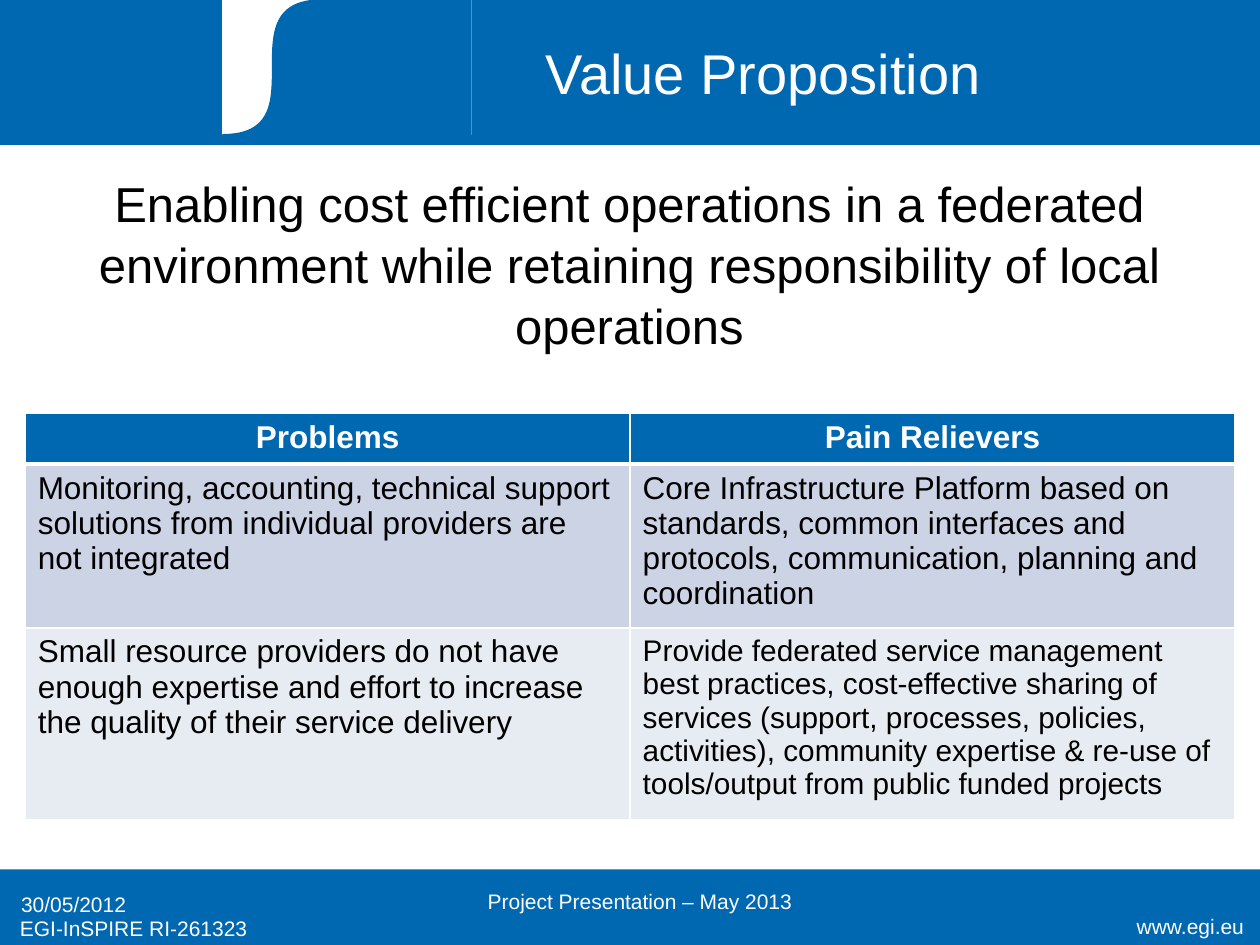
import dataclasses

import pptx
import pptx.dml.color
import pptx.enum.shapes
import pptx.enum.text
import pptx.oxml.ns
import pptx.util
from lxml import etree

Pt = pptx.util.Pt
RGB = pptx.dml.color.RGBColor.from_string
ALIGN = pptx.enum.text.PP_ALIGN
ANCHOR = pptx.enum.text.MSO_ANCHOR
RECTANGLE = pptx.enum.shapes.MSO_SHAPE.RECTANGLE


@dataclasses.dataclass(frozen=True)
class Theme:
    """Colours, font and type sizes of the slide."""

    blue: str = "0067B1"
    white: str = "FFFFFF"
    black: str = "000000"
    bands: tuple = ("CCD3E4", "E7EBF2")
    font: str = "Arial"
    title: float = 32
    statement: float = 28
    table: float = 18
    dense: float = 17
    footer: float = 12
    hairline: float = 0.75


THEME = Theme()


def write(frame, text, size, color, align=ALIGN.LEFT, bold=False, spacing=None):
    """Put one formatted paragraph in a text frame."""
    paragraph = frame.paragraphs[0]
    paragraph.text = text
    paragraph.alignment = align
    if spacing:
        paragraph.line_spacing = spacing
    formats = {"name": THEME.font, "size": Pt(size), "bold": bold}
    for key, value in formats.items():
        setattr(paragraph.font, key, value)
    paragraph.font.color.rgb = RGB(color)


def add_text(slide, box, text, size, color, anchor=ANCHOR.TOP, **paragraph):
    """Add a wrapping text box."""
    frame = slide.shapes.add_textbox(*map(Pt, box)).text_frame
    frame.word_wrap = True
    frame.vertical_anchor = anchor
    write(frame, text, size, color, **paragraph)


def paint(shape, color, outlined=True):
    """Give a shape one flat colour, with a matching outline if wanted."""
    shape.shadow.inherit = False
    shape.fill.solid()
    shape.fill.fore_color.rgb = RGB(color)
    if outlined:
        shape.line.color.rgb = RGB(color)
        shape.line.width = Pt(THEME.hairline)
    else:
        shape.line.fill.background()


def s_curve(left, top, width, height, steps=48):
    """Return points of the S-shaped edge from bottom left to the top."""
    reach = 0.4 * width
    points = []
    for step in range(steps + 1):
        t = step / steps
        across = 3 * t * (1 - t) ** 2 + t**3
        down = (1 - t) ** 3 + 3 * t * (1 - t) ** 2
        points.append((left + reach * across, top + height * down))
    return points


def add_header(slide, box):
    """Draw the title band with its curved white notch."""
    left, top, width, height = box
    notch = (left + 127.4, top, 141.8, 77)
    for area, color in ((box, THEME.blue), (notch, THEME.white)):
        paint(slide.shapes.add_shape(RECTANGLE, *map(Pt, area)), color)
    right, bottom = notch[0] + notch[2], top + notch[3]
    builder = slide.shapes.build_freeform(Pt(right), Pt(top))
    outline = [(right, bottom), *s_curve(*notch)]
    builder.add_line_segments([(Pt(x), Pt(y)) for x, y in outline], close=True)
    paint(builder.convert_to_shape(), THEME.blue)
    add_text(slide, (left + 167, top + 9.4, 538.6, 68.4), "Value Proposition",
             THEME.title, THEME.white, ANCHOR.MIDDLE,
             align=ALIGN.CENTER, spacing=0.9)


def add_statement(slide, box):
    """Write the value statement."""
    add_text(slide, box,
             "Enabling cost efficient operations in a federated environment "
             "while retaining responsibility of local operations",
             THEME.statement, THEME.black, align=ALIGN.CENTER, spacing=1.04)


def set_borders(cell, widths):
    """Draw white borders of the given widths around a cell."""
    properties = cell._tc.get_or_add_tcPr()
    qn = pptx.oxml.ns.qn
    for side, width in widths.items():
        line = etree.SubElement(properties, qn(f"a:ln{side}"), w=str(Pt(width)))
        fill = etree.SubElement(line, qn("a:solidFill"))
        etree.SubElement(fill, qn("a:srgbClr"), val=THEME.white)


def add_comparison(slide, box):
    """Build the table of problems and pain relievers."""
    rows = (
        ("Problems", "Pain Relievers"),
        ("Monitoring, accounting, technical support solutions from individual "
         "providers are not integrated",
         "Core Infrastructure Platform based on standards, common interfaces "
         "and protocols, communication, planning and coordination"),
        ("Small resource providers do not have enough expertise and effort to "
         "increase the quality of their service delivery",
         "Provide federated service management best practices, cost-effective "
         "sharing of services (support, processes, policies, activities), "
         "community expertise & re-use of tools/output from public funded "
         "projects"),
    )
    table = slide.shapes.add_table(len(rows), 2, *map(Pt, box)).table
    for column in table.columns:
        column.width = Pt(box[2] / 2)
    for row, share in zip(table.rows, (0.13, 0.4, 0.47)):
        row.height = Pt(box[3] * share)
    for r, texts in enumerate(rows):
        head = r == 0
        for c, text in enumerate(texts):
            cell = table.cell(r, c)
            set_borders(cell, {"L": 1, "R": 1, "T": 3 if r == 1 else 1,
                               "B": 3 if head else 1})
            cell.fill.solid()
            cell.fill.fore_color.rgb = RGB(
                THEME.blue if head else THEME.bands[r - 1])
            write(cell.text_frame, text,
                  THEME.dense if (r, c) == (2, 1) else THEME.table,
                  THEME.white if head else THEME.black,
                  ALIGN.CENTER if head else ALIGN.LEFT, head)


def add_footer(slide, box):
    """Draw the bottom band with date, project, event and web address."""
    left, top, width, height = box
    paint(slide.shapes.add_shape(RECTANGLE, *map(Pt, box)), THEME.blue, False)
    labels = (
        ("www.egi.eu", (604, 21.6, 114, 22.3), ANCHOR.TOP, ALIGN.RIGHT),
        ("EGI-InSPIRE RI-261323", (4.3, 23, 180, 22.3), ANCHOR.TOP, ALIGN.LEFT),
        ("Project Presentation – May 2013", (190, 3.6, 351.4, 28.8),
         ANCHOR.MIDDLE, ALIGN.CENTER),
        ("30/05/2012", (5, 5.2, 167.8, 28.8), ANCHOR.MIDDLE, ALIGN.LEFT),
    )
    for text, (x, y, w, h), anchor, align in labels:
        add_text(slide, (left + x, top + y, w, h), text, THEME.footer,
                 THEME.white, anchor, align=align)


def main():
    """Build and save the slide."""
    deck = pptx.Presentation()
    deck.slide_width, deck.slide_height = Pt(720), Pt(540)
    slide = deck.slides.add_slide(deck.slide_layouts[6])
    add_header(slide, (0, 0, 720, 82.4))
    add_statement(slide, (19.4, 94.3, 680.4, 118.8))
    add_comparison(slide, (14.4, 236.4, 691.4, 219))
    add_footer(slide, (0, 496.8, 720, 43.2))
    deck.save("out.pptx")


if __name__ == "__main__":
    main()
